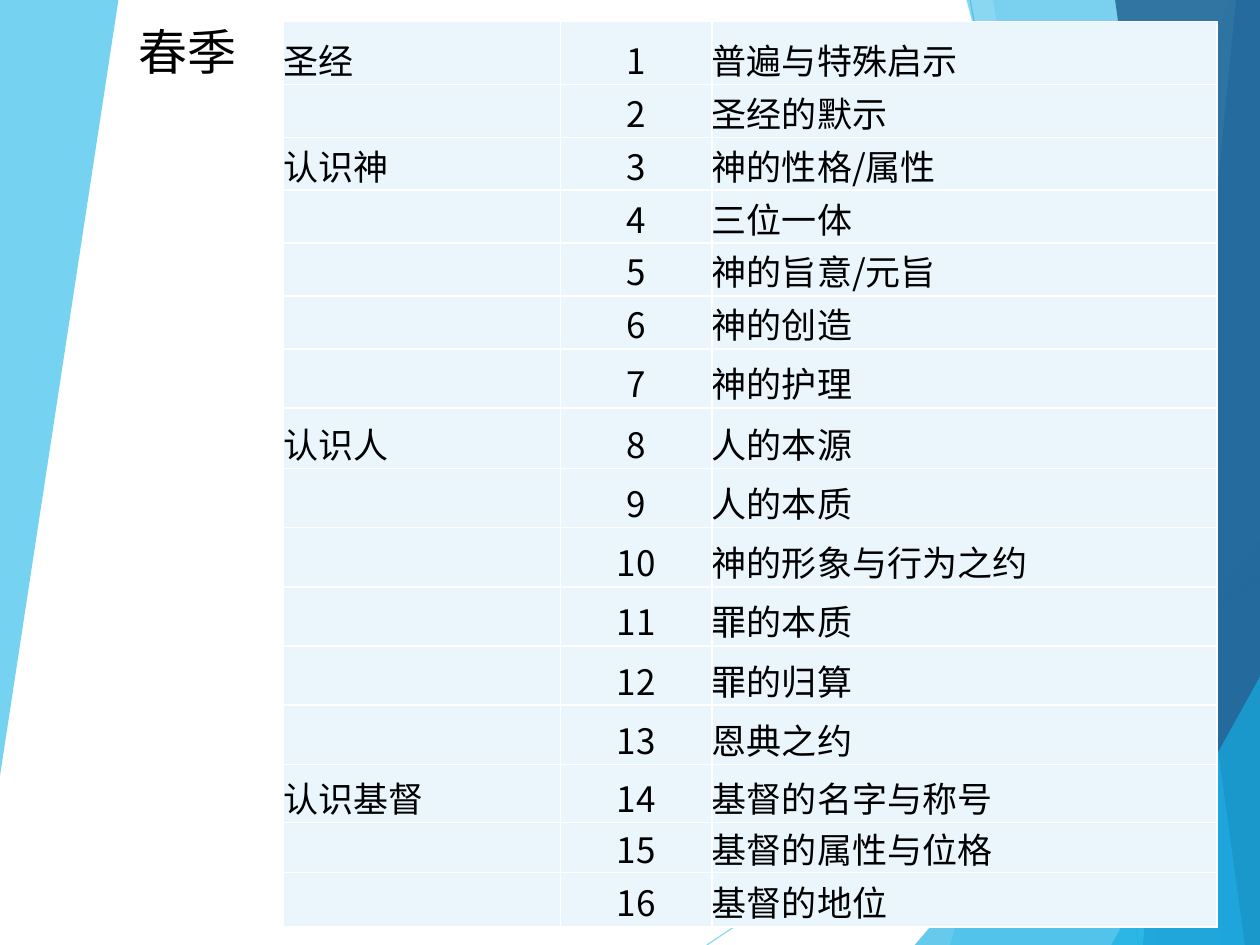
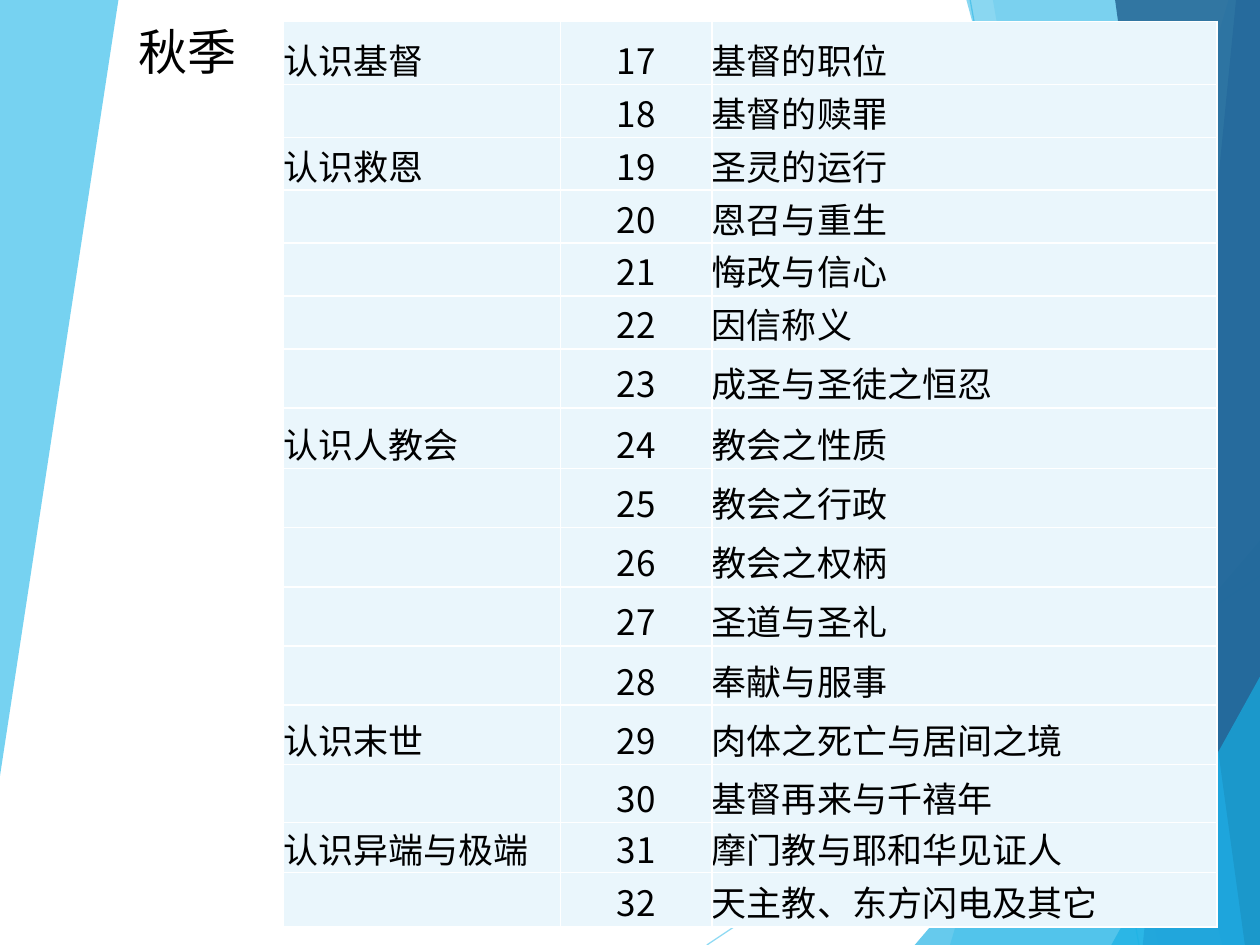
import pptx
import pptx.util
import pptx.dml.color
import pptx.enum.text
import pptx.oxml
import pptx.oxml.ns
from lxml import etree

Inches = pptx.util.Inches
Pt = pptx.util.Pt
qn = pptx.oxml.ns.qn

# Shared look
FONT = "Noto Sans CJK SC"
INK, WHITE, PALE = "000000", "FFFFFF", "EAF6FC"
SKY, AQUA, BLUE, NAVY = "5FCBEF", "17B0E4", "2E83C3", "226292"

# Backdrop: rays as (start, end), panes as (colour, opacity, corners)
RAYS = [((5.61, 7.5), (10, 4.57)), ((7.7, 0), (9.04, 7.5))]
PANES = [
    (SKY, 36, [(9.75, 0), (7.54, 7.5), (10, 7.5), (10, 0)]),
    (SKY, 20, [(7.88, 0), (9.19, 7.5), (10, 7.5), (10, 0)]),
    (AQUA, 66, [(7.26, 7.5), (10, 4.29), (10, 7.5)]),
    (AQUA, 50, [(7.67, 0), (9.7, 7.5), (10, 7.5), (10, 0)]),
    (BLUE, 70, [(9.81, 0), (9.07, 7.5), (10, 7.5), (10, 0)]),
    (NAVY, 82, [(8.85, 0), (9.88, 7.5), (10, 7.5), (10, 0)]),
    (AQUA, 66, [(8.82, 7.5), (10, 5.37), (10, 7.5)]),
    (SKY, 85, [(0, 0), (0.94, 0), (0, 6.16)]),
]

# Table grid
COLS = [2.2, 1.2, 4.01]
ROWS = [0.5] + [0.42] * 5 + [0.47, 0.48] + [0.47] * 5 + [0.46, 0.4, 0.43]

# Each term: title, first lesson number, topics with their lessons
TERMS = [
    ("春季", 1, [
        ("圣经", ["普遍与特殊启示", "圣经的默示"]),
        ("认识神", ["神的性格/属性", "三位一体", "神的旨意/元旨",
                 "神的创造", "神的护理"]),
        ("认识人", ["人的本源", "人的本质", "神的形象与行为之约",
                 "罪的本质", "罪的归算", "恩典之约"]),
        ("认识基督", ["基督的名字与称号", "基督的属性与位格", "基督的地位"]),
    ]),
    ("秋季", 17, [
        ("认识基督", ["基督的职位", "基督的赎罪"]),
        ("认识救恩", ["圣灵的运行", "恩召与重生", "悔改与信心",
                  "因信称义", "成圣与圣徒之恒忍"]),
        ("认识人教会", ["教会之性质", "教会之行政", "教会之权柄",
                   "圣道与圣礼", "奉献与服事"]),
        ("认识末世", ["肉体之死亡与居间之境", "基督再来与千禧年"]),
        ("认识异端与极端", ["摩门教与耶和华见证人", "天主教、东方闪电及其它"]),
    ]),
]


def tint(fill, code, alpha=100):
    """Set a solid colour, see-through when alpha is under 100."""
    fill.solid()
    fill.fore_color.rgb = pptx.dml.color.RGBColor.from_string(code)
    if alpha < 100:
        color = fill._xPr.find(".//" + qn("a:srgbClr"))
        etree.SubElement(color, qn("a:alpha"), val=str(alpha * 1000))


def write(frame, text, size):
    """Put one line of text in a frame and style its run."""
    para = frame.paragraphs[0]
    para.text = text
    for run in para.runs:
        run.font.size = Pt(size)
        run.font.name = FONT
        tint(run.font.fill, INK)
        etree.SubElement(run.font._element, qn("a:ea"), typeface=FONT)
    return para


def add_ray(slide, start, end):
    ends = [Inches(v) for v in start + end]
    ray = slide.shapes.add_connector(1, *ends)
    ray.line.width = Pt(0.75)
    tint(ray.line.fill, SKY, 70)
    etree.SubElement(ray._element.spPr, qn("a:effectLst"))


def add_pane(slide, code, alpha, corners):
    spots = [(Inches(x), Inches(y)) for x, y in corners]
    outline = slide.shapes.build_freeform(*spots[0])
    outline.add_line_segments(spots[1:], close=True)
    pane = outline.convert_to_shape()
    pane.shadow.inherit = False
    pane.line.fill.background()
    tint(pane.fill, code, alpha)


def add_title(slide, text):
    box = slide.shapes.add_textbox(
        Inches(1), Inches(0.17), Inches(1.17), Inches(0.57))
    frame = box.text_frame
    frame.word_wrap = True
    frame.auto_size = pptx.enum.text.MSO_AUTO_SIZE.SHAPE_TO_FIT_TEXT
    frame.margin_top = frame.margin_bottom = 0
    write(frame, text, 28)


def edge(cell):
    """Draw white borders on all four sides of a cell."""
    props = cell._tc.get_or_add_tcPr()
    for side in ("lnL", "lnR", "lnT", "lnB"):
        line = etree.SubElement(props, qn("a:" + side), w=str(Pt(1)))
        solid = etree.SubElement(line, qn("a:solidFill"))
        etree.SubElement(solid, qn("a:srgbClr"), val=WHITE)


def fill_cell(cell, text):
    edge(cell)
    tint(cell.fill, PALE)
    cell.margin_left = cell.margin_right = 0
    cell.margin_top = cell.margin_bottom = 0
    cell.vertical_anchor = pptx.enum.text.MSO_ANCHOR.BOTTOM
    para = write(cell.text_frame, text, 20)
    if text.isdigit():
        para.alignment = pptx.enum.text.PP_ALIGN.CENTER


def list_rows(first, topics):
    """Number the lessons; name a topic only on its first row."""
    pairs = [(topic if i == 0 else "", lesson)
             for topic, lessons in topics for i, lesson in enumerate(lessons)]
    return [(topic, str(num), lesson)
            for num, (topic, lesson) in enumerate(pairs, first)]


def add_plan(slide, rows):
    table = slide.shapes.add_table(
        len(rows), len(COLS), Inches(2.25), Inches(0.17),
        Inches(sum(COLS)), Inches(sum(ROWS))).table
    table.first_row = table.horz_banding = False
    for col, width in zip(table.columns, COLS):
        col.width = Inches(width)
    for row, height, texts in zip(table.rows, ROWS, rows):
        row.height = Inches(height)
        for cell, text in zip(row.cells, texts):
            fill_cell(cell, text)


def main():
    deck = pptx.Presentation()
    deck.slide_width, deck.slide_height = Inches(10), Inches(7.5)
    for title, first, topics in TERMS:
        slide = deck.slides.add_slide(deck.slide_layouts[6])
        tint(slide.background.fill, WHITE)
        # Backdrop
        for ray in RAYS:
            add_ray(slide, *ray)
        for pane in PANES:
            add_pane(slide, *pane)
        # Content
        add_title(slide, title)
        add_plan(slide, list_rows(first, topics))
    deck.save("out.pptx")


if __name__ == "__main__":
    main()
